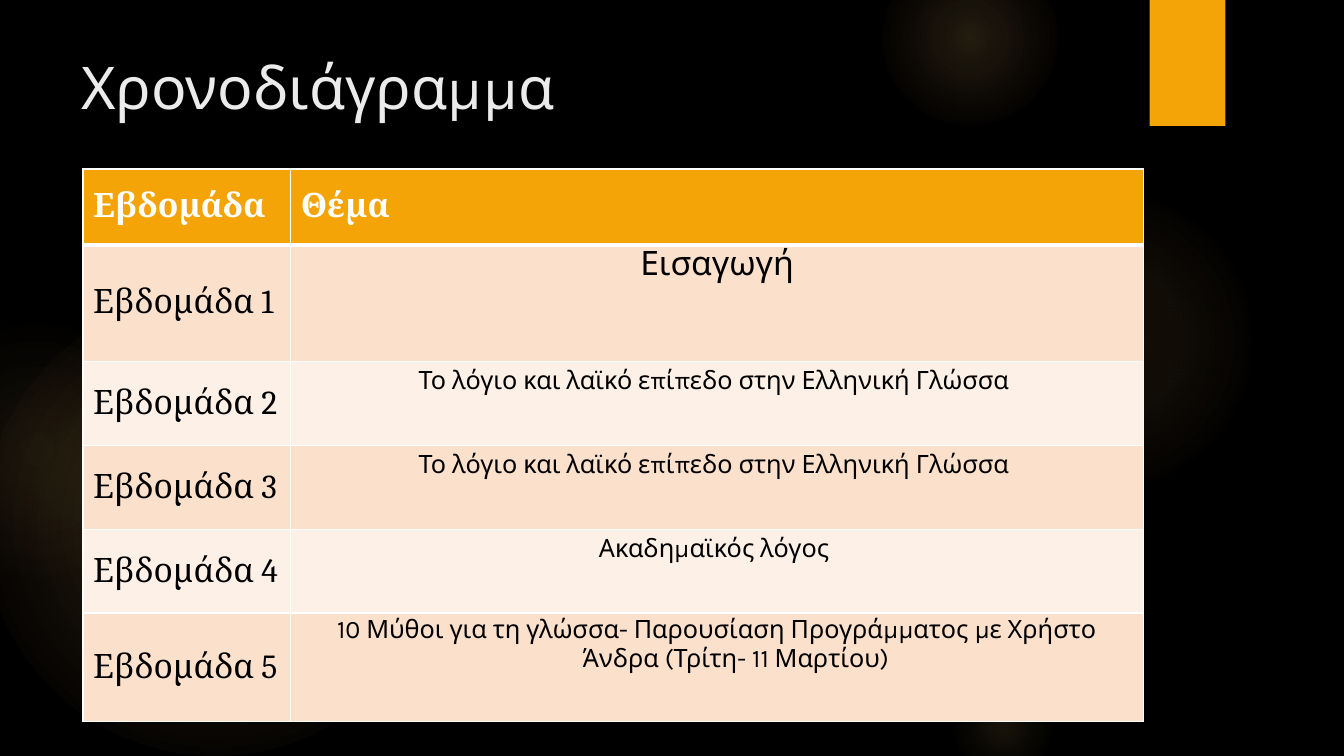
from dataclasses import dataclass

from lxml.etree import SubElement
from pptx import Presentation
from pptx.dml.color import RGBColor
from pptx.enum.shapes import MSO_SHAPE
from pptx.enum.text import MSO_ANCHOR, PP_ALIGN
from pptx.oxml import parse_xml
from pptx.oxml.ns import nsdecls, qn
from pptx.util import Emu, Pt


@dataclass(frozen=True)
class Theme:
    background: str = "000000"
    accent: str = "F5A408"
    glow: str = "FAC96A"
    glow_edge: str = "F59B74"
    heading: str = "EBEBEB"
    border: str = "FFFFFF"
    ink: str = "000000"
    bands: tuple = ("FBE0CC", "FDF0E7")
    sans: str = "Karla"
    serif: str = "Cambria"
    title_size: int = 42
    large_size: int = 24
    topic_size: int = 18


THEME = Theme()
SLIDE_BOX = (0, 0, 1280, 720)
TITLE_BOX = (68, 48, 988, 147)
TABLE_BOX = (79, 161, 1010, 526)
WEEK_WIDTH = 198
HEADER_HEIGHT = 72
HANG = 36

GLOWS = [
    (-16, 280, 440, [(0, 11), (36, 10), (75, 0)], THEME.glow),
    (-88, 304, 248, [(0, 8), (36, 5), (71, 0)], THEME.glow_edge),
    (903, 176, 296, [(0, 7), (36, 6), (69, 0)], THEME.glow),
    (840, -48, 168, [(0, 14), (36, 7), (73, 0)], THEME.glow),
    (903, 640, 104, [(0, 10), (31, 5), (66, 0)], THEME.glow),
]

WEEKS = [
    ("Εισαγωγή", THEME.large_size, 111, 0, 0),
    ("Το λόγιο και λαϊκό επίπεδο στην Ελληνική Γλώσσα ", THEME.topic_size, 80, 5, 0),
    ("Το λόγιο και λαϊκό επίπεδο στην Ελληνική Γλώσσα ", THEME.topic_size, 80, 5, HANG),
    ("Ακαδημαϊκός λόγος ", THEME.topic_size, 80, 5, HANG),
    ("10 Μύθοι για τη γλώσσα- Παρουσίαση Προγράμματος με Χρήστο Άνδρα "
     "(Τρίτη- 11 Μαρτίου)", THEME.topic_size, 103, 2, HANG),
]


def px(length):
    return Emu(length * 9525)


def rgb(color):
    return RGBColor.from_string(color)


def style(paragraph, typeface, size, color, bold=False):
    font = paragraph.font
    font.name, font.size, font.bold = typeface, Pt(size), bold
    font.color.rgb = rgb(color)


def add_panel(slide, kind, box):
    panel = slide.shapes.add_shape(kind, *map(px, box))
    panel.shadow.inherit = False
    panel.line.fill.background()
    panel.fill.solid()
    panel.fill.fore_color.rgb = rgb(THEME.accent)
    return panel


def add_glow(slide, box, stops, edge):
    glow = add_panel(slide, MSO_SHAPE.OVAL, box)
    colors = [THEME.glow, THEME.glow, edge]
    stop_xml = "".join(
        f'<a:gs pos="{position * 1000}"><a:srgbClr val="{color}">'
        f'<a:alpha val="{opacity * 1000}"/></a:srgbClr></a:gs>'
        for (position, opacity), color in zip(stops, colors))
    gradient = parse_xml(
        f'<a:gradFill {nsdecls("a")}><a:gsLst>{stop_xml}</a:gsLst><a:path path="circle">'
        '<a:fillToRect l="50000" t="50000" r="50000" b="50000"/></a:path></a:gradFill>')
    properties = glow.element.spPr
    properties.replace(properties.find(qn("a:solidFill")), gradient)


def add_backdrop(slide, box):
    left, top, _, _ = box
    slide.background.fill.solid()
    slide.background.fill.fore_color.rgb = rgb(THEME.background)
    for x, y, diameter, stops, edge in GLOWS:
        add_glow(slide, (left + x, top + y, diameter, diameter), stops, edge)
    add_panel(slide, MSO_SHAPE.RECTANGLE, (left + 1095, top, 72, 120))


def add_title(slide, box):
    frame = slide.shapes.add_textbox(*map(px, box)).text_frame
    frame.word_wrap = True
    frame.margin_top = 0
    heading = frame.paragraphs[0]
    heading.text = "Χρονοδιάγραμμα"
    style(heading, THEME.sans, THEME.title_size, THEME.heading)


def set_cell(cell, text, fill, bottom_border=1):
    cell.text = text
    cell.vertical_anchor = MSO_ANCHOR.MIDDLE
    properties = cell._tc.get_or_add_tcPr()
    for side in ("lnL", "lnR", "lnT", "lnB"):
        width = bottom_border if side == "lnB" else 1
        line = SubElement(properties, qn(f"a:{side}"), w=str(Pt(width)))
        line_fill = SubElement(line, qn("a:solidFill"))
        SubElement(line_fill, qn("a:srgbClr"), val=THEME.border)
    cell.fill.solid()
    cell.fill.fore_color.rgb = rgb(fill)
    return cell.text_frame.paragraphs[0]


def set_topic(cell, topic, fill, size, inset, hang):
    paragraph = set_cell(cell, topic, fill)
    cell.vertical_anchor = MSO_ANCHOR.TOP
    cell.margin_top, cell.margin_bottom = px(inset), 0
    paragraph.alignment = PP_ALIGN.CENTER
    if hang:
        indents = paragraph._p.get_or_add_pPr()
        indents.set("marL", str(px(hang)))
        indents.set("indent", str(px(-hang)))
    style(paragraph, THEME.sans, size, THEME.ink)


def add_schedule(slide, box):
    schedule = slide.shapes.add_table(len(WEEKS) + 1, 2, *map(px, box)).table
    schedule.columns[0].width = px(WEEK_WIDTH)
    schedule.columns[1].width = px(box[2] - WEEK_WIDTH)
    schedule.rows[0].height = px(HEADER_HEIGHT)
    for column, label in enumerate(("Εβδομάδα", "Θέμα")):
        header = set_cell(schedule.cell(0, column), label, THEME.accent, 3)
        style(header, THEME.serif, THEME.large_size, THEME.border, True)
    for number, (topic, size, height, inset, hang) in enumerate(WEEKS, 1):
        band = THEME.bands[(number - 1) % 2]
        schedule.rows[number].height = px(height)
        week = set_cell(schedule.cell(number, 0), f"Εβδομάδα {number}", band)
        style(week, THEME.serif, THEME.large_size, THEME.ink)
        set_topic(schedule.cell(number, 1), topic, band, size, inset, hang)


def main():
    presentation = Presentation()
    presentation.slide_width, presentation.slide_height = map(px, SLIDE_BOX[2:])
    slide = presentation.slides.add_slide(presentation.slide_layouts[6])
    add_backdrop(slide, SLIDE_BOX)
    add_title(slide, TITLE_BOX)
    add_schedule(slide, TABLE_BOX)
    presentation.save("out.pptx")


if __name__ == "__main__":
    main()
